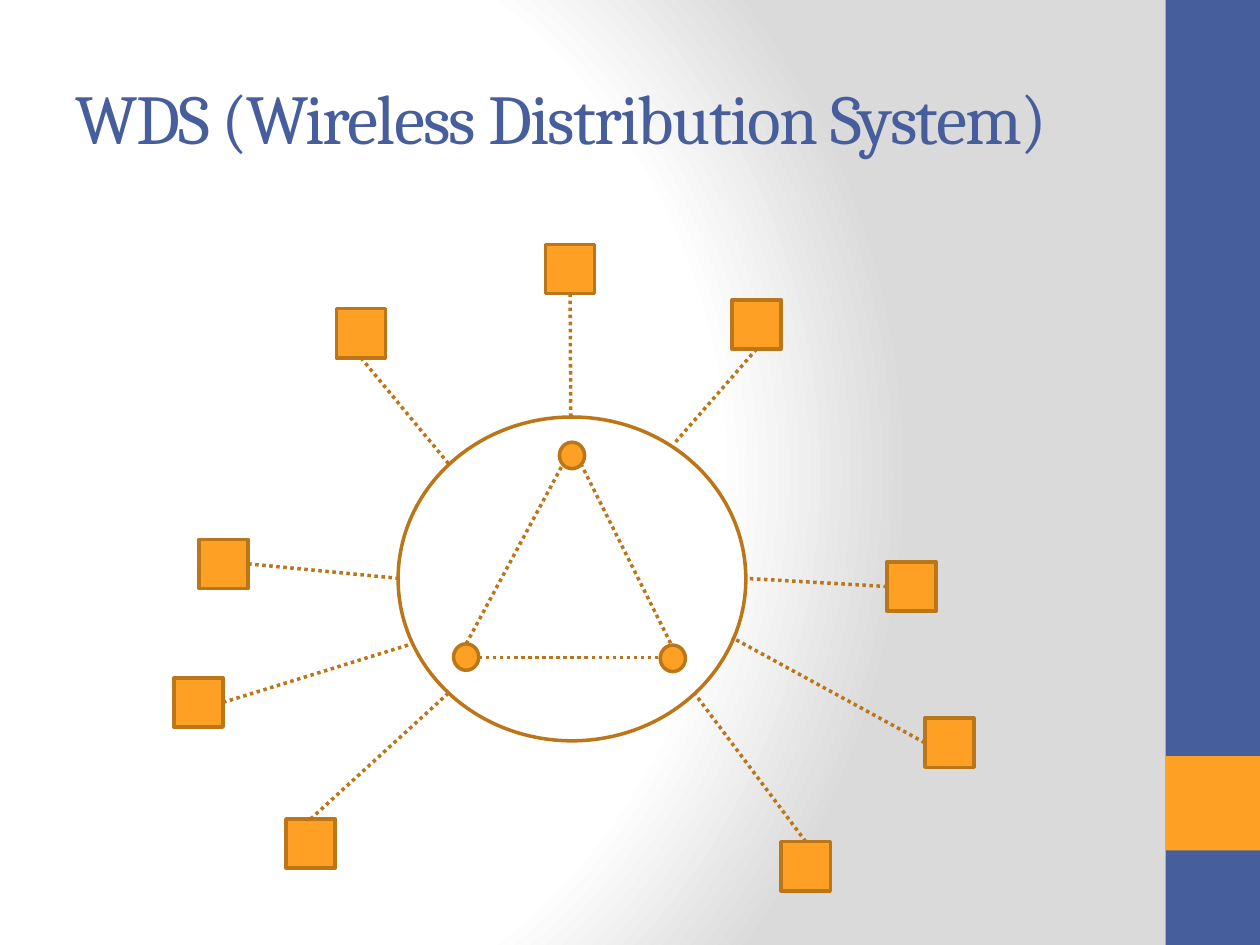
from pptx import Presentation
from pptx.dml.color import RGBColor
from pptx.enum.dml import MSO_LINE
from pptx.enum.shapes import MSO_CONNECTOR, MSO_SHAPE
from pptx.enum.text import MSO_ANCHOR, PP_ALIGN
from pptx.oxml import parse_xml
from pptx.oxml.ns import nsdecls
from pptx.util import Inches, Pt
from lxml.etree import SubElement

BLUE, ORANGE, BROWN, WHITE = "465E9C", "FDA023", "BB761A", "FFFFFF"
STATION = 0.39
NODE_WIDTH, NODE_HEIGHT = 0.2, 0.21

prs = Presentation()
prs.slide_width, prs.slide_height = Inches(10), Inches(7.5)
slide = prs.slides.add_slide(prs.slide_layouts[5])


def add_block(kind, left, top, width, height, fill, outline=None):
    block = slide.shapes.add_shape(
        kind, Inches(left), Inches(top), Inches(width), Inches(height))
    block.shadow.inherit = False
    block.fill.solid()
    block.fill.fore_color.rgb = RGBColor.from_string(fill)
    if outline:
        block.line.color.rgb = RGBColor.from_string(outline)
        block.line.width = Pt(2)
    else:
        block.line.fill.background()


def add_link(x1, y1, x2, y2):
    link = slide.shapes.add_connector(
        MSO_CONNECTOR.STRAIGHT, Inches(x1), Inches(y1), Inches(x2), Inches(y2))
    link.line.color.rgb = RGBColor.from_string(BROWN)
    link.line.width = Pt(2)
    link.line.dash_style = MSO_LINE.ROUND_DOT
    SubElement(link._element.spPr,
               "{http://schemas.openxmlformats.org/drawingml/2006/main}effectLst")


stops = "".join(
    f'<a:gs pos="{percent * 1000}"><a:srgbClr val="{color}"/></a:gs>'
    for percent, color in [(0, WHITE), (75, WHITE), (100, "DADADA")])
slide._element.cSld.insert(0, parse_xml(
    f'<p:bg {nsdecls("p", "a")}><p:bgPr><a:gradFill rotWithShape="1">'
    f'<a:gsLst>{stops}</a:gsLst><a:path path="circle">'
    '<a:fillToRect l="20000" t="50000" r="100000" b="50000"/></a:path>'
    '</a:gradFill><a:effectLst/></p:bgPr></p:bg>'))

title = slide.shapes.title
title.left, title.top = Inches(0.5), Inches(0.3)
title.width, title.height = Inches(8.33), Inches(1.25)
title.text_frame.text = "WDS (Wireless Distribution System)"
title.text_frame.vertical_anchor = MSO_ANCHOR.MIDDLE
heading = title.text_frame.paragraphs[0]
heading.alignment = PP_ALIGN.LEFT
heading.font.name = "Cambria"
heading.font.size = Pt(40)
heading.font.color.rgb = RGBColor.from_string(BLUE)
heading.runs[0].font._element.set("spc", "-100")

add_block(MSO_SHAPE.RECTANGLE, 9.25, 0, 0.75, 7.5, BLUE)
add_block(MSO_SHAPE.RECTANGLE, 9.25, 6, 0.75, 0.75, ORANGE)
add_block(MSO_SHAPE.OVAL, 3.16, 3.31, 2.76, 2.57, WHITE, BROWN)

TOP, BOTTOM, LEFT, RIGHT = (0.5, 0), (0.5, 1), (0, 0.5), (1, 0.5)
stations = [
    (4.33, 1.94, BOTTOM, 4.53, 3.31),
    (5.81, 2.38, BOTTOM, 5.36, 3.51),
    (7.04, 4.46, LEFT, 5.91, 4.59),
    (7.34, 5.7, LEFT, 5.81, 5.06),
    (6.2, 6.68, TOP, 5.51, 5.5),
    (2.27, 6.5, TOP, 3.56, 5.5),
    (1.38, 5.38, RIGHT, 3.27, 5.11),
    (1.58, 4.28, RIGHT, 3.16, 4.59),
    (2.67, 2.45, BOTTOM, 3.56, 3.68),
]
for left, top, (side_x, side_y), ring_x, ring_y in stations:
    add_link(left + side_x * STATION, top + side_y * STATION, ring_x, ring_y)
    add_block(MSO_SHAPE.RECTANGLE, left, top, STATION, STATION, ORANGE, BROWN)

for link_ends in [(4.61, 3.68, 5.33, 5.12), (3.8, 5.22, 5.24, 5.22),
                  (3.7, 5.11, 4.47, 3.68)]:
    add_link(*link_ends)
for left, top in [(4.44, 3.51), (5.24, 5.12), (3.6, 5.11)]:
    add_block(MSO_SHAPE.OVAL, left, top, NODE_WIDTH, NODE_HEIGHT, ORANGE, BROWN)

prs.save("out.pptx")
